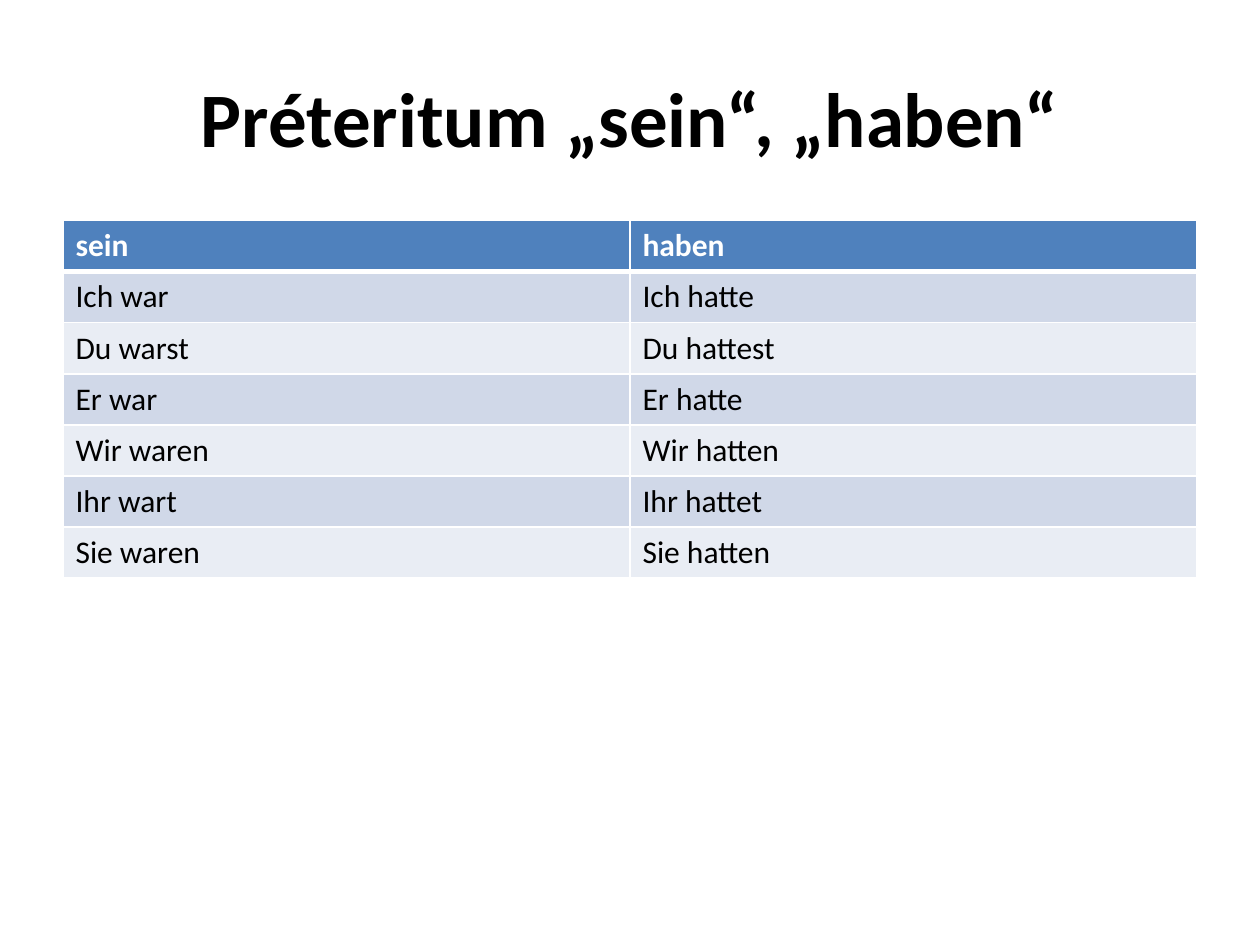
"""Build a slide that conjugates sein and haben in the preterite."""
import pptx
import pptx.dml.color
import pptx.enum.text
import pptx.oxml.ns
import pptx.util
from lxml import etree

Inches = pptx.util.Inches
Pt = pptx.util.Pt
RGBColor = pptx.dml.color.RGBColor
PP_ALIGN = pptx.enum.text.PP_ALIGN
MSO_ANCHOR = pptx.enum.text.MSO_ANCHOR

TITLE = "Préteritum „sein“, „haben“"
CONJUGATION = [
    ("sein", "haben"),
    ("Ich war", "Ich hatte"),
    ("Du warst", "Du hattest"),
    ("Er war", "Er hatte"),
    ("Wir waren", "Wir hatten"),
    ("Ihr wart", "Ihr hattet"),
    ("Sie waren", "Sie hatten"),
]

FONT = "Calibri"
BLACK = RGBColor(0x00, 0x00, 0x00)
WHITE = RGBColor(0xFF, 0xFF, 0xFF)
HEADER_BLUE = RGBColor(0x4F, 0x81, 0xBD)
BANDS = [RGBColor(0xD0, 0xD8, 0xE8), RGBColor(0xE9, 0xED, 0xF4)]

LEFT, WIDTH = Inches(0.5), Inches(9)
TABLE_TOP, TABLE_HEIGHT = Inches(1.75), Inches(2.84)


def write_text(frame, text, size=18, color=BLACK, bold=False, align=PP_ALIGN.LEFT):
    paragraph = frame.paragraphs[0]
    paragraph.alignment = align
    run = paragraph.add_run()
    run.text = text
    run.font.name = FONT
    run.font.size = Pt(size)
    run.font.bold = bold
    run.font.color.rgb = color


def set_border(cell, side, width):
    qn = pptx.oxml.ns.qn
    properties = cell._tc.get_or_add_tcPr()
    line = etree.SubElement(properties, qn(f"a:ln{side}"), w=str(Pt(width)))
    fill = etree.SubElement(line, qn("a:solidFill"))
    etree.SubElement(fill, qn("a:srgbClr"), val=str(WHITE))


def add_title(slide):
    box = slide.shapes.add_textbox(LEFT, Inches(0.3), WIDTH, Inches(1.25))
    frame = box.text_frame
    frame.word_wrap = True
    frame.vertical_anchor = MSO_ANCHOR.MIDDLE
    write_text(frame, TITLE, size=44, bold=True, align=PP_ALIGN.CENTER)


def add_conjugation_table(slide):
    row_count, column_count = len(CONJUGATION), len(CONJUGATION[0])
    table = slide.shapes.add_table(
        row_count, column_count, LEFT, TABLE_TOP, WIDTH, TABLE_HEIGHT
    ).table
    for row_index, forms in enumerate(CONJUGATION):
        is_header = row_index == 0
        for column_index, form in enumerate(forms):
            cell = table.cell(row_index, column_index)
            for side in "LRTB":
                under_header = (is_header and side == "B") or (row_index == 1 and side == "T")
                set_border(cell, side, 3 if under_header else 1)
            cell.fill.solid()
            cell.fill.fore_color.rgb = HEADER_BLUE if is_header else BANDS[(row_index - 1) % 2]
            write_text(cell.text_frame, form, color=WHITE if is_header else BLACK, bold=is_header)


def main():
    presentation = pptx.Presentation()
    presentation.slide_width = Inches(10)
    presentation.slide_height = Inches(7.5)
    slide = presentation.slides.add_slide(presentation.slide_layouts[6])
    add_title(slide)
    add_conjugation_table(slide)
    presentation.save("out.pptx")


if __name__ == "__main__":
    main()
